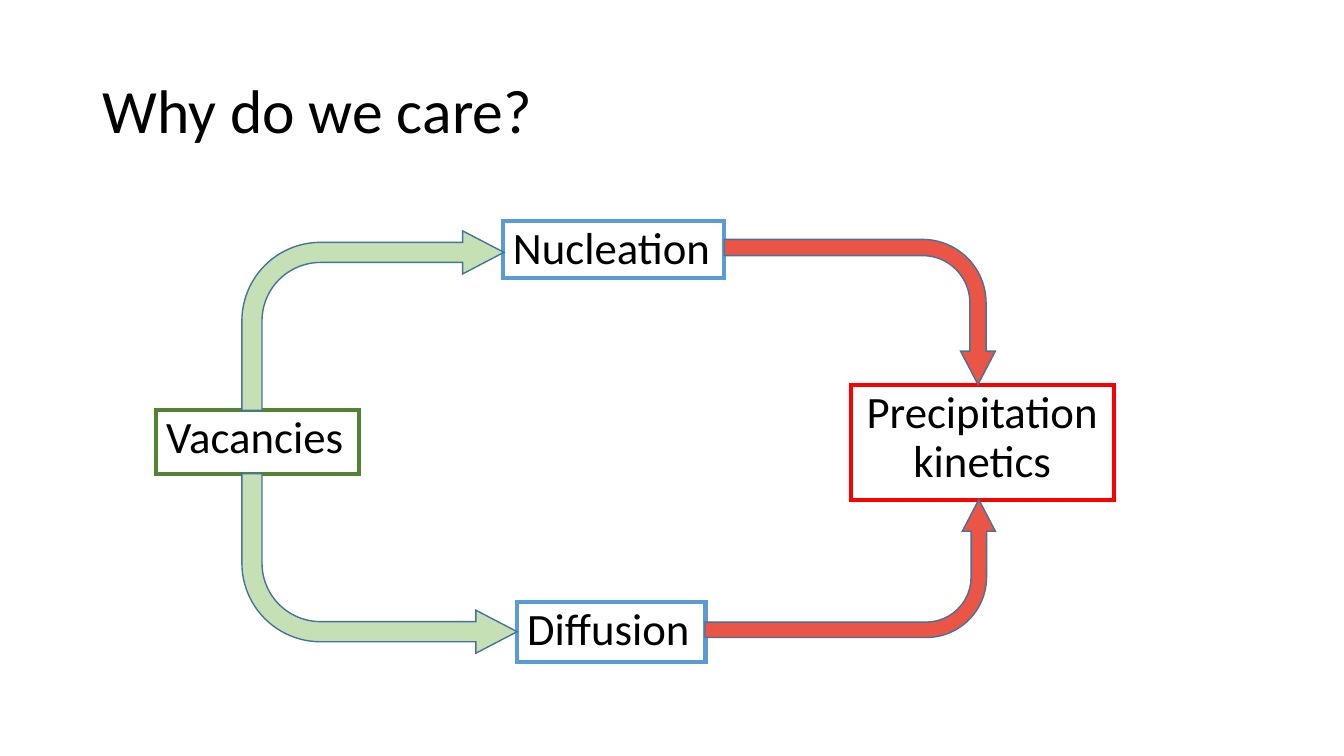
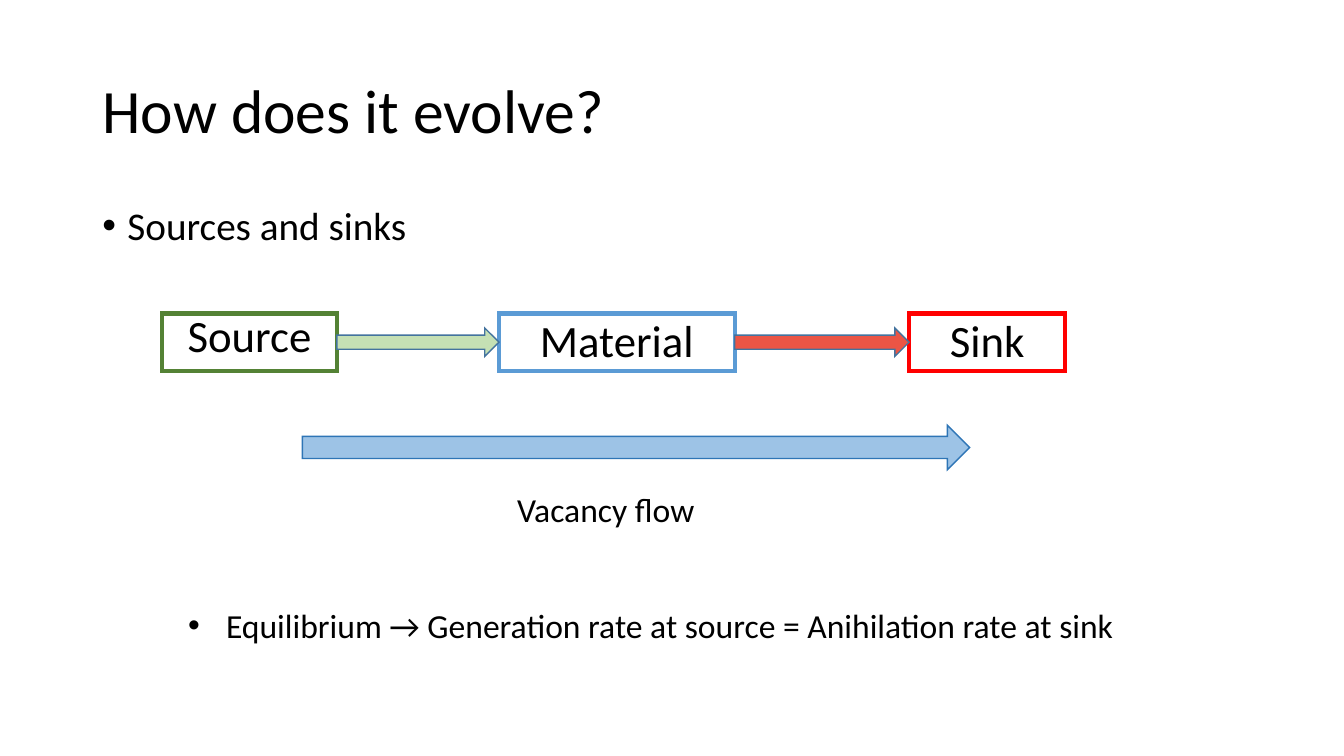
from dataclasses import dataclass

from lxml.etree import SubElement
from pptx import Presentation
from pptx.dml.color import RGBColor
from pptx.enum.shapes import MSO_SHAPE as Preset
from pptx.enum.text import MSO_ANCHOR as Anchor, MSO_AUTO_SIZE as AutoSize, PP_ALIGN as Align
from pptx.oxml.ns import qn
from pptx.util import Pt


@dataclass(frozen=True)
class Theme:
    font: str = "Calibri"
    title_size: int = 44
    box_size: int = 32
    body_size: int = 28
    note_size: int = 24
    text: str = "000000"
    green: str = "548235"
    light_green: str = "C5E0B4"
    blue: str = "5B9BD5"
    light_blue: str = "9DC3E6"
    dark_blue: str = "2E75B6"
    red: str = "FF0000"
    light_red: str = "EB5545"
    arrow_line: str = "43739E"


theme = Theme()


def write_text(shape, text, size, align=Align.LEFT, anchor=Anchor.TOP, spacing=0.9, indent=0, wrap=True):
    frame = shape.text_frame
    frame.auto_size = AutoSize.NONE
    frame.word_wrap = wrap
    frame.vertical_anchor = anchor
    paragraph = frame.paragraphs[0]
    paragraph.alignment = align
    paragraph.line_spacing = spacing
    paragraph.space_before = Pt(0)
    if indent:
        properties = paragraph._p.get_or_add_pPr()
        properties.set("marL", str(Pt(indent)))
        properties.set("indent", str(-Pt(indent)))
        SubElement(properties, qn("a:buFont"), typeface="Arial")
        SubElement(properties, qn("a:buChar"), char="•")
    run = paragraph.add_run()
    run.text = text
    run.font.name = theme.font
    run.font.size = Pt(size)
    run.font.color.rgb = RGBColor.from_string(theme.text)


def add_outlined(slide, preset, bounds, line, width, fill=None):
    shape = slide.shapes.add_shape(preset, *map(Pt, bounds))
    shape.shadow.inherit = False
    if fill:
        shape.fill.solid()
        shape.fill.fore_color.rgb = RGBColor.from_string(fill)
    else:
        shape.fill.background()
    shape.line.color.rgb = RGBColor.from_string(line)
    shape.line.width = Pt(width)
    SubElement(shape.line._get_or_add_ln(), qn("a:miter"), lim="800000")
    return shape


presentation = Presentation()
presentation.slide_width = Pt(960)
presentation.slide_height = Pt(540)

slides = []
for title in ("Why do we care?", "How does it evolve?"):
    slide = presentation.slides.add_slide(presentation.slide_layouts[5])
    heading = slide.shapes.title
    heading.left, heading.top, heading.width, heading.height = map(Pt, (66, 28.75, 828, 104.4))
    write_text(heading, title, theme.title_size, anchor=Anchor.MIDDLE)
    slides.append(slide)
care_slide, evolve_slide = slides

for text, bounds, color, align in (
    ("Vacancies", (111.6, 293, 144.7, 45.4), theme.green, Align.LEFT),
    ("Diffusion", (369.4, 429.8, 134.6, 43.2), theme.blue, Align.LEFT),
    ("Nucleation", (359.3, 157.7, 157.7, 41), theme.blue, Align.LEFT),
    ("Precipitation kinetics", (607.7, 275, 187.9, 82.1), theme.red, Align.CENTER),
):
    box = add_outlined(care_slide, Preset.RECTANGLE, bounds, color, 3)
    write_text(box, text, theme.box_size, align=align)

for bounds, fill, rotation, flip in (
    ((172.8, 164.9, 187.2, 128.2), theme.light_green, 0, None),
    ((172.8, 338.4, 196.6, 128.2), theme.light_green, 0, "flipV"),
    ((562.3, 126, 103.7, 193.7), theme.light_red, 90, None),
    ((558, 302.4, 98.6, 207.4), theme.light_red, 90, "flipH"),
):
    arrow = add_outlined(care_slide, Preset.BENT_ARROW, bounds, theme.arrow_line, 1, fill)
    arrow.rotation = rotation
    for index, value in enumerate((0.112, 0.12, 0.23, 0.438)):
        arrow.adjustments[index] = value
    if flip:
        arrow._element.spPr.find(qn("a:xfrm")).set(flip, "1")

bullet = evolve_slide.shapes.add_textbox(Pt(66), Pt(144), Pt(828), Pt(342))
write_text(bullet, "Sources and sinks", theme.body_size, indent=18)

stages = (
    ("Source", 116, 124.6, theme.green, 0.8),
    ("Material", 356.4, 168.5, theme.blue, 0.9),
    ("Sink", 649.4, 111.6, theme.red, 0.9),
)
for text, left, width, color, spacing in stages:
    box = add_outlined(evolve_slide, Preset.RECTANGLE, (left, 224, width, 41), color, 3)
    write_text(box, text, theme.box_size, align=Align.CENTER, spacing=spacing)

for before, after, fill in zip(stages, stages[1:], (theme.light_green, theme.light_red)):
    start = before[1] + before[2]
    bounds = (start, 234.3, after[1] - start, 20.2)
    add_outlined(evolve_slide, Preset.RIGHT_ARROW, bounds, theme.arrow_line, 1, fill)

equilibrium = evolve_slide.shapes.add_textbox(Pt(127.4), Pt(414), Pt(738.7), Pt(51))
write_text(
    equilibrium,
    "Equilibrium → Generation rate at source = Anihilation rate at sink",
    theme.note_size,
    spacing=1.5,
    indent=27,
)

caption = evolve_slide.shapes.add_textbox(Pt(362.2), Pt(345.6), Pt(142.6), Pt(36))
write_text(caption, "Vacancy flow", theme.note_size, spacing=1, wrap=False)

add_outlined(
    evolve_slide, Preset.RIGHT_ARROW, (216, 303.8, 476.6, 31.7), theme.dark_blue, 1, theme.light_blue
)

presentation.save("out.pptx")
